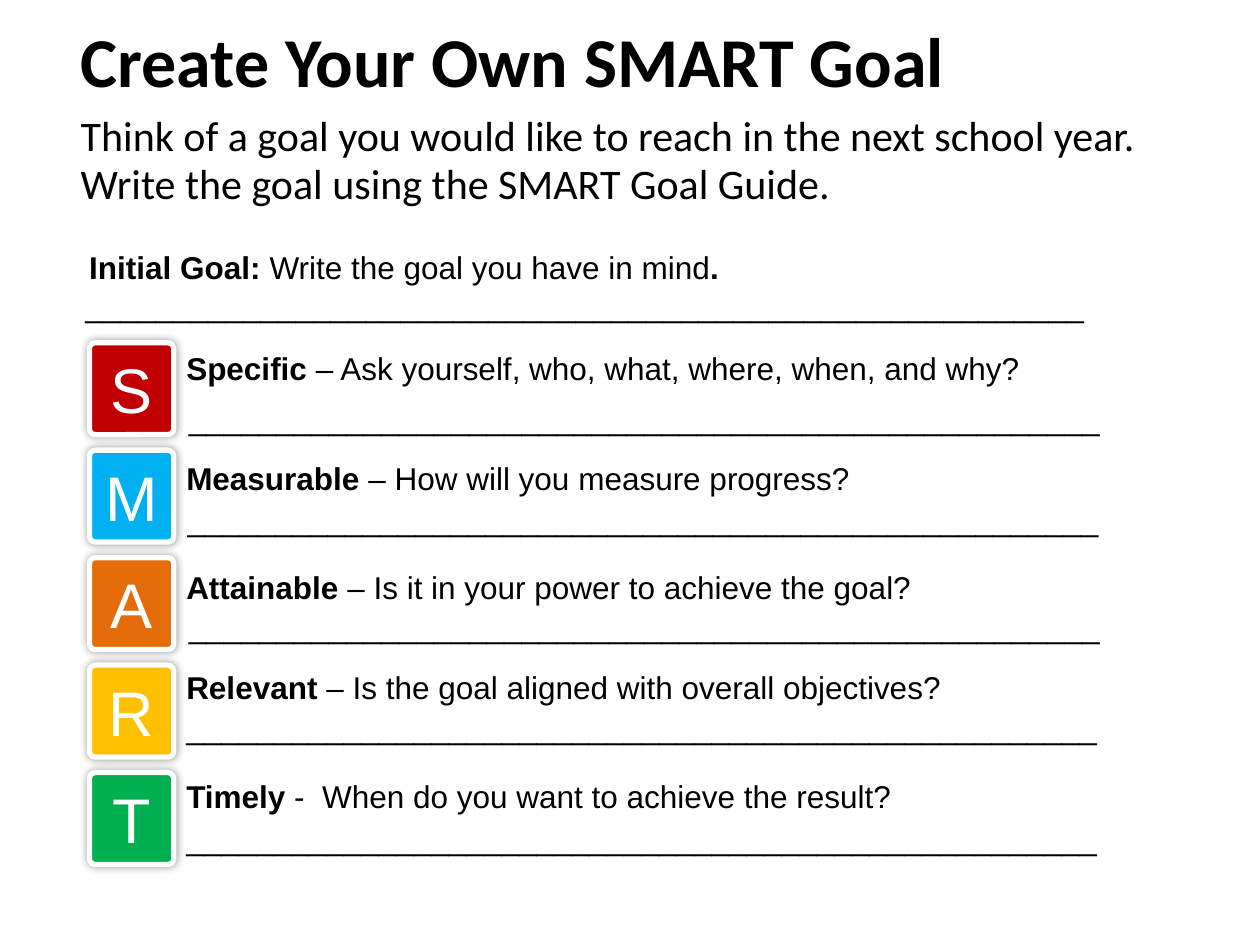
from lxml import etree
from pptx import Presentation
from pptx import util as u
from pptx.dml.color import RGBColor
from pptx.enum import shapes, text
from pptx.oxml import parse_xml
from pptx.oxml.ns import nsdecls, qn

BLACK = RGBColor(0x00, 0x00, 0x00)
WHITE = RGBColor(0xFF, 0xFF, 0xFF)
RED = RGBColor(0xC0, 0x00, 0x00)
BLUE = RGBColor(0x00, 0xB0, 0xF0)
ORANGE = RGBColor(0xE4, 0x6C, 0x0A)
YELLOW = RGBColor(0xFF, 0xC0, 0x00)
GREEN = RGBColor(0x00, 0xB0, 0x50)

TITLE = "Create Your Own SMART Goal"
INTRO = ("Think of a goal you would like to reach in the next school year. "
         "Write the goal using the SMART Goal Guide.")
INITIAL_GOAL = [("Initial Goal: ", True), ("Write the goal you have in mind", False), (".", True)]

# word, question, colour, prompt top, answer line left and top
STEPS = [
    ("Specific", " – Ask yourself, who, what, where, when, and why?", RED, 2.72, 1.4, 3.12),
    ("Measurable", " – How will you measure progress?", BLUE, 3.59, 1.39, 3.92),
    ("Attainable", " – Is it in your power to achieve the goal?", ORANGE, 4.46, 1.4, 4.77),
    ("Relevant", " – Is the goal aligned with overall objectives?", YELLOW, 5.25, 1.38, 5.57),
    ("Timely", " -  When do you want to achieve the result?", GREEN, 6.12, 1.38, 6.45),
]
ANSWER_LINE = "_" * 52
INITIAL_LINE = "_" * 57

TILE_LEFT, TILE_TOP, TILE_WIDTH, TILE_HEIGHT = 0.71, 2.72, 0.67, 0.73
TILE_STEP = 0.853
PROMPT_LEFT, TEXT_WIDTH, TEXT_HEIGHT = 1.38, 8.21, 0.4


def style(font, name, size, color, bold=False):
    font.name, font.size, font.bold = name, u.Pt(size), bold
    font.color.rgb = color


def fill_placeholder(box, words, top, height, size, bold, anchor):
    box.left, box.top = u.Inches(0.54), u.Inches(top)
    box.width, box.height = u.Inches(8.66), u.Inches(height)
    frame = box.text_frame
    frame.text = words
    frame.auto_size = text.MSO_AUTO_SIZE.NONE
    frame.vertical_anchor = anchor
    para = frame.paragraphs[0]
    para.alignment = text.PP_ALIGN.LEFT
    para.space_before = u.Pt(0)
    style(para.runs[0].font, "Calibri", size, BLACK, bold)
    return para


def add_text(page, left, top, spans):
    box = page.shapes.add_textbox(u.Inches(left), u.Inches(top),
                                  u.Inches(TEXT_WIDTH), u.Inches(TEXT_HEIGHT))
    box.text_frame.word_wrap = True
    para = box.text_frame.paragraphs[0]
    for words, bold in spans:
        span = para.add_run()
        span.text = words
        style(span.font, "Arial", 18, BLACK, bold)


def add_tile(page, letter, color, top):
    tile = page.shapes.add_shape(shapes.MSO_SHAPE.ROUNDED_RECTANGLE,
                                 u.Inches(TILE_LEFT), u.Inches(top),
                                 u.Inches(TILE_WIDTH), u.Inches(TILE_HEIGHT))
    tile.adjustments[0] = 0.07
    tile.fill.solid()
    tile.fill.fore_color.rgb = color
    tile.line.color.rgb = WHITE
    tile.line.width = u.Pt(3)
    tile.shadow.inherit = False
    effects = tile.element.spPr.find(qn("a:effectLst"))
    effects.append(parse_xml(
        f'<a:outerShdw {nsdecls("a")} blurRad="{u.Pt(5)}" dist="0" dir="0" rotWithShape="0">'
        '<a:srgbClr val="000000"><a:alpha val="40000"/></a:srgbClr></a:outerShdw>'))
    frame = tile.text_frame
    frame.text = letter
    frame.vertical_anchor = text.MSO_ANCHOR.MIDDLE
    para = frame.paragraphs[0]
    para.alignment = text.PP_ALIGN.CENTER
    style(para.runs[0].font, "Arial", 36, WHITE)


def main():
    deck = Presentation()
    deck.slide_width, deck.slide_height = u.Inches(10), u.Inches(7.5)
    page = deck.slides.add_slide(deck.slide_layouts[1])

    fill_placeholder(page.shapes.title, TITLE, -0.15, 1.25, 40, True, text.MSO_ANCHOR.MIDDLE)
    intro = fill_placeholder(page.placeholders[1], INTRO, 0.85, 0.99, 24, False,
                             text.MSO_ANCHOR.TOP)
    intro.line_spacing = 0.95
    properties = intro._p.get_or_add_pPr()
    properties.set("marL", "0")
    properties.set("indent", "0")
    etree.SubElement(properties, qn("a:buNone"))

    add_text(page, 0.61, 1.92, INITIAL_GOAL)
    add_text(page, 0.58, 2.22, [(INITIAL_LINE, False)])
    for row, (word, question, color, prompt_top, line_left, line_top) in enumerate(STEPS):
        add_tile(page, word[0], color, TILE_TOP + row * TILE_STEP)
        add_text(page, PROMPT_LEFT, prompt_top, [(word, True), (question, False)])
        add_text(page, line_left, line_top, [(ANSWER_LINE, False)])

    deck.save("out.pptx")


if __name__ == "__main__":
    main()
